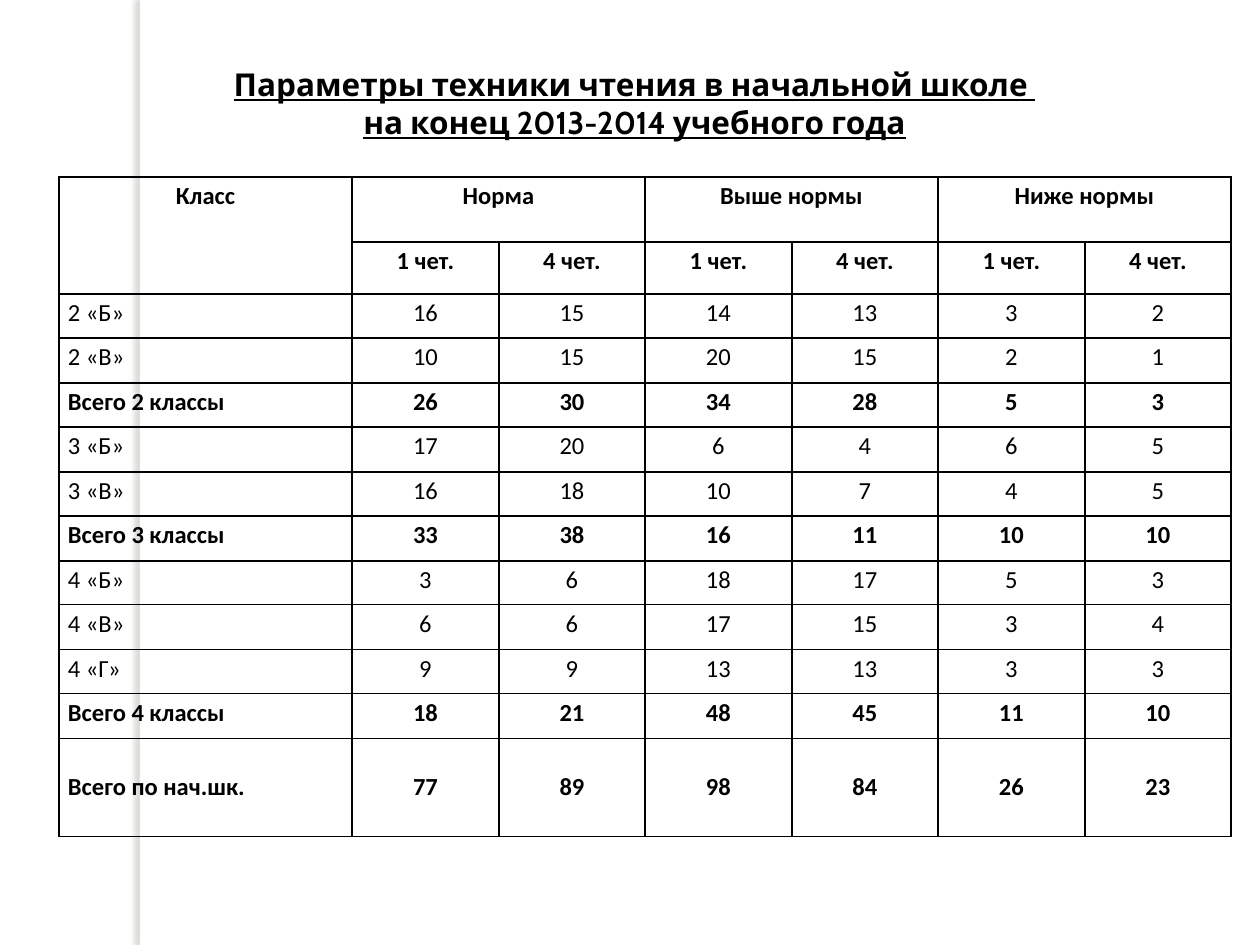
from lxml.etree import SubElement
from pptx import Presentation
from pptx.dml.color import RGBColor
from pptx.enum.shapes import MSO_SHAPE
from pptx.enum.text import MSO_ANCHOR, PP_ALIGN
from pptx.oxml import parse_xml
from pptx.oxml.ns import nsdecls, qn
from pptx.util import Pt

EMU_PER_PX = 914400 / 126
COLORS = {"ink": "000000", "paper": "FFFFFF", "shade": "736F63"}
TITLE_LINES = [
    "Параметры техники чтения в начальной школе ",
    "на конец 2013-2014 учебного года",
]
GROUPS = ["Норма", "Выше нормы", "Ниже нормы"]
QUARTERS = ["1 чет.", "4 чет."]
RESULTS = [
    ("2 «Б»", 16, 15, 14, 13, 3, 2),
    ("2 «В»", 10, 15, 20, 15, 2, 1),
    ("Всего 2 классы", 26, 30, 34, 28, 5, 3),
    ("3 «Б»", 17, 20, 6, 4, 6, 5),
    ("3 «В»", 16, 18, 10, 7, 4, 5),
    ("Всего 3 классы", 33, 38, 16, 11, 10, 10),
    ("4 «Б»", 3, 6, 18, 17, 5, 3),
    ("4 «В»", 6, 6, 17, 15, 3, 4),
    ("4 «Г»", 9, 9, 13, 13, 3, 3),
    ("Всего 4 классы", 18, 21, 48, 45, 11, 10),
    ("Всего по нач.шк.", 77, 89, 98, 84, 26, 23),
]
COLUMN_WIDTHS = [293] + [147, 146] * 3
ROW_HEIGHTS = [65, 52] + [44, 45] * 5 + [98]


def px(length):
    return round(length * EMU_PER_PX)


def color(name):
    return RGBColor.from_string(COLORS[name])


def style_paragraph(para, font_name, size, bold, align):
    para.alignment = align
    para.font.name = font_name
    para.font.size = Pt(size)
    para.font.bold = bold
    para.font.color.rgb = color("ink")


def add_side_strip(page):
    strip = page.shapes.add_shape(MSO_SHAPE.RECTANGLE, px(140), 0, px(10), px(945))
    strip.fill.solid()
    strip.fill.fore_color.rgb = color("paper")
    strip.line.fill.background()
    strip.shadow.inherit = False
    effects = strip.element.spPr.find(qn("a:effectLst"))
    shadow = SubElement(effects, qn("a:outerShdw"), blurRad=str(Pt(3)),
                        dist=str(Pt(3)), dir="10800000", algn="tl", rotWithShape="0")
    tint = SubElement(shadow, qn("a:srgbClr"), val=COLORS["shade"])
    SubElement(tint, qn("a:alpha"), val="25000")


def set_title(page):
    title = page.shapes.title
    title.left, title.top, title.width, title.height = map(px, (118, 59, 1033, 89))
    frame = title.text_frame
    frame.text = "\n".join(TITLE_LINES)
    frame.word_wrap = True
    frame.vertical_anchor = MSO_ANCHOR.TOP
    for para in frame.paragraphs:
        style_paragraph(para, "Cabin", 18, True, PP_ALIGN.CENTER)
        para.font.underline = True


def add_borders(cell):
    properties = cell._tc.get_or_add_tcPr()
    for side in "LRTB":
        properties.append(parse_xml(
            f'<a:ln{side} {nsdecls("a")} w="{Pt(1)}"><a:solidFill>'
            f'<a:srgbClr val="{COLORS["ink"]}"/></a:solidFill></a:ln{side}>'
        ))


def write_cell(cell, text, bold, align=PP_ALIGN.CENTER):
    cell.text = str(text)
    para = cell.text_frame.paragraphs[0]
    style_paragraph(para, "Calibri", 14, bold, align)
    para.line_spacing = 1.15


def write_header(table):
    table.cell(0, 0).merge(table.cell(1, 0))
    write_cell(table.cell(0, 0), "Класс", True)
    for index, group in enumerate(GROUPS):
        column = 1 + index * len(QUARTERS)
        table.cell(0, column).merge(table.cell(0, column + 1))
        write_cell(table.cell(0, column), group, True)
        for offset, quarter in enumerate(QUARTERS):
            write_cell(table.cell(1, column + offset), quarter, True)


def write_results(table):
    for row, values in enumerate(RESULTS, start=2):
        bold = values[0].startswith("Всего")
        for column, value in enumerate(values):
            align = PP_ALIGN.CENTER if column else PP_ALIGN.LEFT
            write_cell(table.cell(row, column), value, bold, align)


def add_results_table(page):
    frame = page.shapes.add_table(
        len(ROW_HEIGHTS), len(COLUMN_WIDTHS), px(59), px(177),
        px(sum(COLUMN_WIDTHS)), px(sum(ROW_HEIGHTS)))
    table = frame.table
    table.first_row = table.horz_banding = False
    for column, width in zip(table.columns, COLUMN_WIDTHS):
        column.width = px(width)
    for row, height in zip(table.rows, ROW_HEIGHTS):
        row.height = px(height)
    for cell in table.iter_cells():
        add_borders(cell)
        cell.fill.background()
        cell.margin_left = cell.margin_right = px(9)
        cell.margin_top = cell.margin_bottom = 0
    for cell in table.rows[len(ROW_HEIGHTS) - 1].cells:
        cell.margin_top = px(29)
    write_header(table)
    write_results(table)


def main():
    deck = Presentation()
    deck.slide_width, deck.slide_height = px(1260), px(945)
    page = deck.slides.add_slide(deck.slide_layouts[5])
    add_side_strip(page)
    set_title(page)
    add_results_table(page)
    deck.save("out.pptx")


if __name__ == "__main__":
    main()
